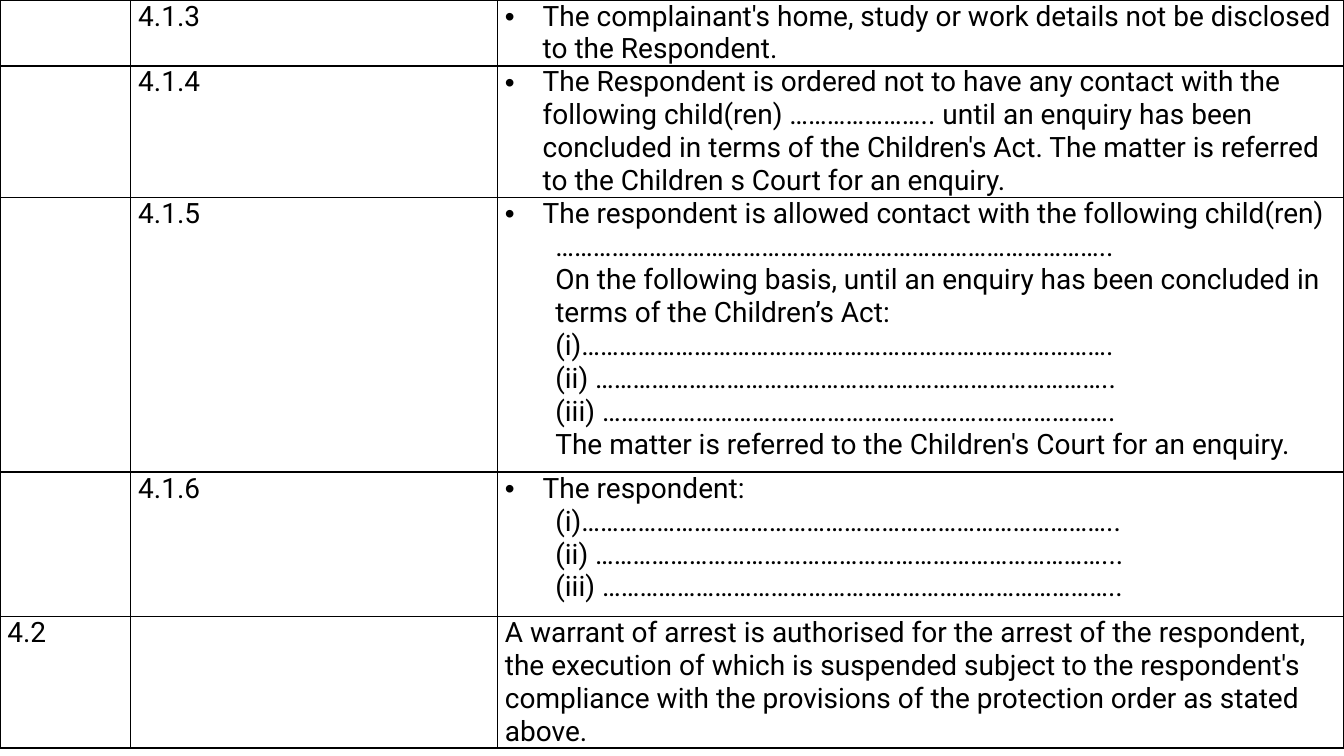
from lxml.etree import SubElement
from pptx import Presentation
from pptx.dml.color import RGBColor
from pptx.oxml.ns import qn
from pptx.util import Pt

WIDTHS = [93.5, 262, 604]
HEIGHTS = [47, 94, 196, 103, 94]
BULLET = "• "
ROWS = [
    ("", "4.1.3", [
        "• The complainant's home, study or work details not be disclosed to the Respondent."]),
    ("", "4.1.4", [
        "• The Respondent is ordered not to have any contact with the following child(ren) "
        "………………….. until an enquiry has been concluded in terms of the Children's Act. "
        "The matter is referred to the Children s Court for an enquiry."]),
    ("", "4.1.5", [
        "• The respondent is allowed contact with the following child(ren)",
        "……………………………………………………………………………..",
        "On the following basis, until an enquiry has been concluded in terms of "
        "the Children’s Act:",
        "(i)………………………………………………………………………….",
        "(ii) ………………………………………………………………………..",
        "(iii) ……………………………………………………………………….",
        "The matter is referred to the Children's Court for an enquiry."]),
    ("", "4.1.6", [
        "• The respondent:",
        "(i)…………………………………………………………………………..",
        "(ii) ………………………………………………………………………...",
        "(iii) ………………………………………………………………………..",
    ]),
    ("4.2", "", [
        "A warrant of arrest is authorised for the arrest of the respondent, the execution "
        "of which is suspended subject to the respondent's compliance with the provisions "
        "of the protection order as stated above."]),
]


def color(code):
    return RGBColor.from_string(code)


class Page:
    font = "Roboto"
    size = 20
    ink = "000000"

    def __init__(self, deck):
        self.slide = deck.slides.add_slide(deck.slide_layouts[6])

    def table(self, left, top, widths, heights, rows):
        grid = self.slide.shapes.add_table(
            len(rows), len(widths), Pt(left), Pt(top),
            Pt(sum(widths)), Pt(sum(heights))).table
        grid.first_row = grid.horz_banding = False
        for column, width in zip(grid.columns, widths):
            column.width = Pt(width)
        for row, height, (part, clause, order) in zip(grid.rows, heights, rows):
            row.height = Pt(height)
            for cell, lines in zip(row.cells, ([part], [clause], order)):
                self.cell(cell, lines)

    def cell(self, cell, lines):
        cell.margin_left = cell.margin_right = Pt(5.2)
        cell.margin_top = cell.margin_bottom = 0
        self.border(cell)
        cell.fill.background()
        listed = lines[0].startswith(BULLET)
        cell.text_frame.text = "\n".join(line.removeprefix(BULLET) for line in lines)
        for number, para in enumerate(cell.text_frame.paragraphs):
            if listed:
                self.indent(para, number == 0)
            for run in para.runs:
                run.font.name = self.font
                run.font.size = Pt(self.size)
                run.font.color.rgb = color(self.ink)

    def indent(self, para, marked):
        """Hang a marked line on its bullet; set the others further in."""
        props = para._p.get_or_add_pPr()
        props.set("marL", str(Pt(27 if marked else 36)))
        props.set("indent", str(Pt(-27 if marked else 0)))
        if marked:
            SubElement(props, qn("a:buFont")).set("typeface", "Arial")
            SubElement(props, qn("a:buChar")).set("char", BULLET.strip())

    def border(self, cell):
        props = cell._tc.get_or_add_tcPr()
        for side in "LRTB":
            line = SubElement(props, qn("a:ln" + side), w=str(Pt(1)))
            fill = SubElement(line, qn("a:solidFill"))
            SubElement(fill, qn("a:srgbClr")).set("val", self.ink)


def main():
    deck = Presentation()
    deck.slide_width, deck.slide_height = Pt(960), Pt(540)
    Page(deck).table(0, 0, WIDTHS, HEIGHTS, ROWS)
    deck.save("out.pptx")


if __name__ == "__main__":
    main()
